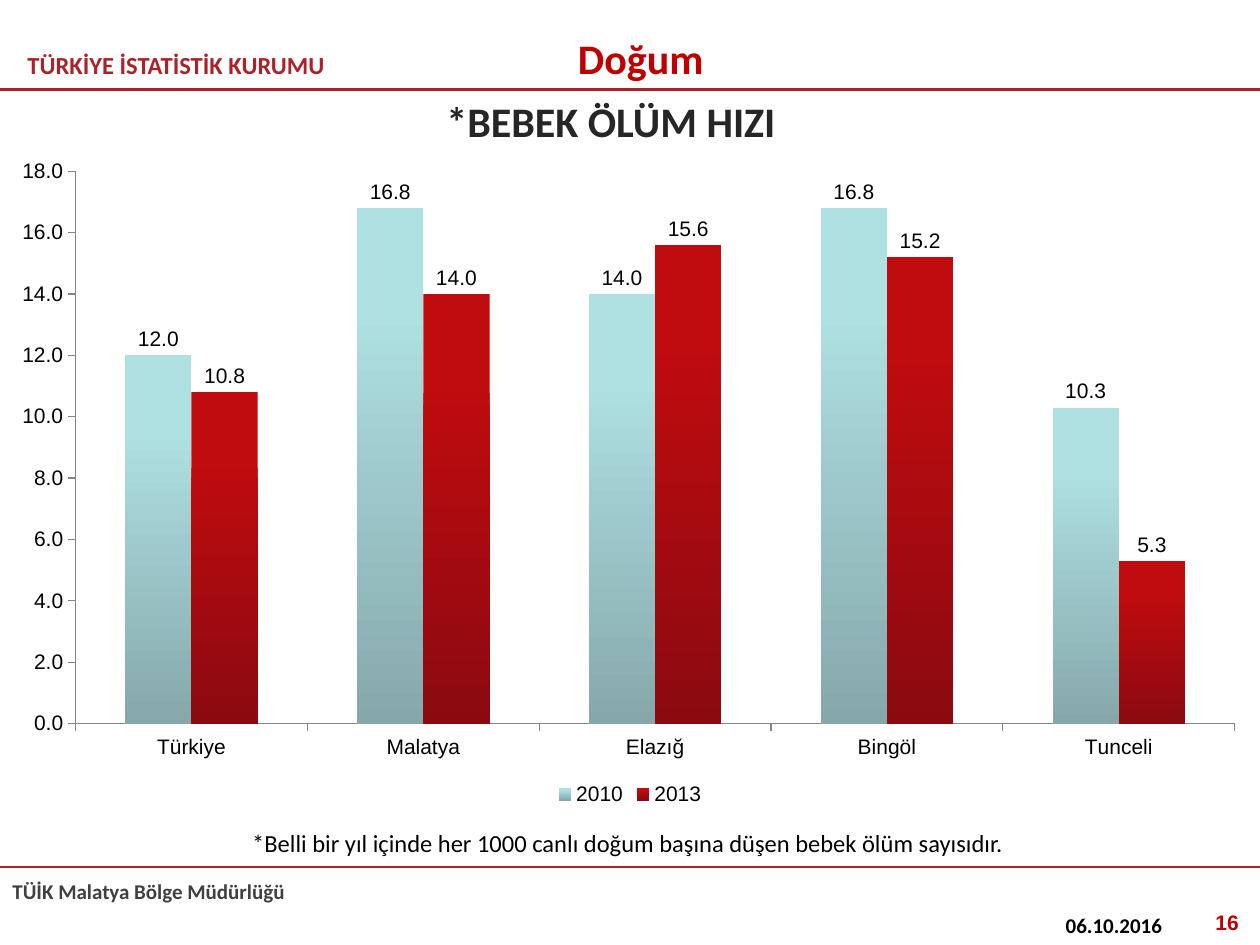
from lxml.etree import SubElement
from pptx import Presentation
from pptx.chart.data import CategoryChartData
from pptx.dml.color import RGBColor
from pptx.enum.chart import XL_CHART_TYPE, XL_LABEL_POSITION, XL_LEGEND_POSITION, XL_TICK_MARK
from pptx.enum.shapes import MSO_CONNECTOR
from pptx.enum.text import MSO_ANCHOR, PP_ALIGN
from pptx.oxml import parse_xml
from pptx.oxml.ns import nsdecls, qn
from pptx.util import Inches, Pt

BLACK = RGBColor(0x00, 0x00, 0x00)
DARK = RGBColor(0x26, 0x26, 0x26)
GRAY = RGBColor(0x40, 0x40, 0x40)
AXIS = RGBColor(0x86, 0x86, 0x86)
RED = RGBColor(0xC0, 0x00, 0x00)
BRICK = RGBColor(0xAB, 0x23, 0x28)
AQUA = (RGBColor(0xAF, 0xE0, 0xE2), RGBColor(0x86, 0xA8, 0xAB))
WINE = (RGBColor(0xC0, 0x0B, 0x0F), RGBColor(0x8A, 0x0A, 0x10))

CITIES = ["Türkiye", "Malatya", "Elazığ", "Bingöl", "Tunceli"]
RATES = {
    "2010": ((12.0, 16.8, 14.0, 16.8, 10.3), AQUA),
    "2013": ((10.8, 14.0, 15.6, 15.2, 5.3), WINE),
}


def put(item, values):
    for key, value in values.items():
        setattr(item, key, value)


def style(font, size, color=BLACK, name="Calibri", bold=False):
    put(font, {"size": Pt(size), "name": name, "bold": bold})
    font.color.rgb = color


def label(slide, box, text, size, color, name="Calibri",
          align=PP_ALIGN.LEFT, anchor=MSO_ANCHOR.TOP):
    frame = slide.shapes.add_textbox(*map(Inches, box)).text_frame
    put(frame, {"word_wrap": True, "vertical_anchor": anchor, "text": text})
    para = frame.paragraphs[0]
    para.alignment = align
    style(para.runs[0].font, size, color, name, True)


def rule(slide, left, top, width):
    line = slide.shapes.add_connector(
        MSO_CONNECTOR.STRAIGHT, Inches(left), Inches(top), Inches(left + width), Inches(top))
    line.line.color.rgb = BRICK
    line.line.width = Pt(1.5)
    SubElement(line._element.spPr, qn("a:effectLst"))


def header(slide, box):
    left, top, width, height = box
    mid = MSO_ANCHOR.MIDDLE
    label(slide, (left + 0.12, top + 0.32, 3.54, 0.39),
          "TÜRKİYE İSTATİSTİK KURUMU", 14, BRICK, anchor=mid)
    label(slide, (left + 4.13, top + 0.21, 1.91, 0.5), "Doğum", 24, RED,
          align=PP_ALIGN.CENTER, anchor=mid)
    rule(slide, left, top + height, width)


def shade(fill, colors):
    fill.gradient()
    fill.gradient_angle = 270
    for stop, color, place in zip(fill.gradient_stops, colors, (0.2, 1)):
        stop.color.rgb = color
        stop.position = place


def bars(slide, box):
    data = CategoryChartData(number_format="0.0")
    data.categories = CITIES
    for name, (rates, _) in RATES.items():
        data.add_series(name, rates)
    chart = slide.shapes.add_chart(
        XL_CHART_TYPE.COLUMN_CLUSTERED, *map(Inches, box), data).chart
    put(chart, {"has_title": False, "has_legend": True})
    style(chart.font, 12, name="Arial")
    put(chart.legend, {"position": XL_LEGEND_POSITION.BOTTOM, "include_in_layout": False})

    for axis in (chart.category_axis, chart.value_axis):
        put(axis, {"has_major_gridlines": False, "major_tick_mark": XL_TICK_MARK.OUTSIDE})
        axis.format.line.color.rgb = AXIS
        style(axis.tick_labels.font, 12, name="Arial")
    put(chart.value_axis, {"minimum_scale": 0, "maximum_scale": 18, "major_unit": 2})
    form = {"number_format": "0.0", "number_format_is_linked": False}
    put(chart.value_axis.tick_labels, form)

    plot = chart.plots[0]
    put(plot, {"gap_width": 150, "overlap": 0, "vary_by_categories": False})
    for series, (_, colors) in zip(plot.series, RATES.values()):
        series.invert_if_negative = False
        shade(series.format.fill, colors)
        tags = series.data_labels
        put(tags, {"show_value": True, "position": XL_LABEL_POSITION.OUTSIDE_END, **form})
        style(tags.font, 12, name="Arial")

    area = chart._chartSpace.chart.plotArea
    for old in area.findall(qn("c:layout")):
        area.remove(old)
    area.insert(0, parse_xml(
        f'<c:layout {nsdecls("c")}><c:manualLayout><c:layoutTarget val="inner"/>'
        '<c:xMode val="edge"/><c:yMode val="edge"/><c:x val="0.06"/><c:y val="0.04"/>'
        '<c:w val="0.92"/><c:h val="0.83"/></c:manualLayout></c:layout>'))


def note(slide, box):
    table = slide.shapes.add_table(1, 3, *map(Inches, box)).table
    put(table, {"first_row": False, "horz_banding": False})
    for column, width in zip(table.columns, (0.03, 9.97, 0.08)):
        column.width = Inches(width)
    sides = ("margin_left", "margin_right", "margin_top", "margin_bottom")
    for cell in table.rows[0].cells:
        cell.fill.background()
        put(cell, {"vertical_anchor": MSO_ANCHOR.BOTTOM, **dict.fromkeys(sides, 0)})
    cell = table.cell(0, 1)
    cell.text = "*Belli bir yıl içinde her 1000 canlı doğum başına düşen bebek ölüm sayısıdır."
    para = cell.text_frame.paragraphs[0]
    para.alignment = PP_ALIGN.CENTER
    style(para.runs[0].font, 14)


def footer(slide, box):
    left, top, width, _ = box
    rule(slide, left, top, width)
    label(slide, (left, top + 0.04, 4.29, 0.3), "TÜİK Malatya Bölge Müdürlüğü", 12, GRAY)
    label(slide, (left + 8.36, top + 0.31, 1.2, 0.3), "06.10.2016", 12, BLACK)
    label(slide, (left + 9.3, top + 0.29, 0.63, 0.3), "16", 12, RED, "Arial", PP_ALIGN.RIGHT)


def main():
    deck = Presentation()
    put(deck, {"slide_width": Inches(10), "slide_height": Inches(7.5)})
    slide = deck.slides.add_slide(deck.slide_layouts[6])
    header(slide, (0, 0, 10, 0.71))
    label(slide, (0.35, 0.6, 9, 0.71), "*BEBEK ÖLÜM HIZI", 24, DARK,
          align=PP_ALIGN.CENTER, anchor=MSO_ANCHOR.MIDDLE)
    bars(slide, (0, 1.15, 10, 5.28))
    note(slide, (-0.04, 6.51, 10.08, 0.31))
    footer(slide, (0, 6.88, 10, 0.62))
    deck.save("out.pptx")


if __name__ == "__main__":
    main()
